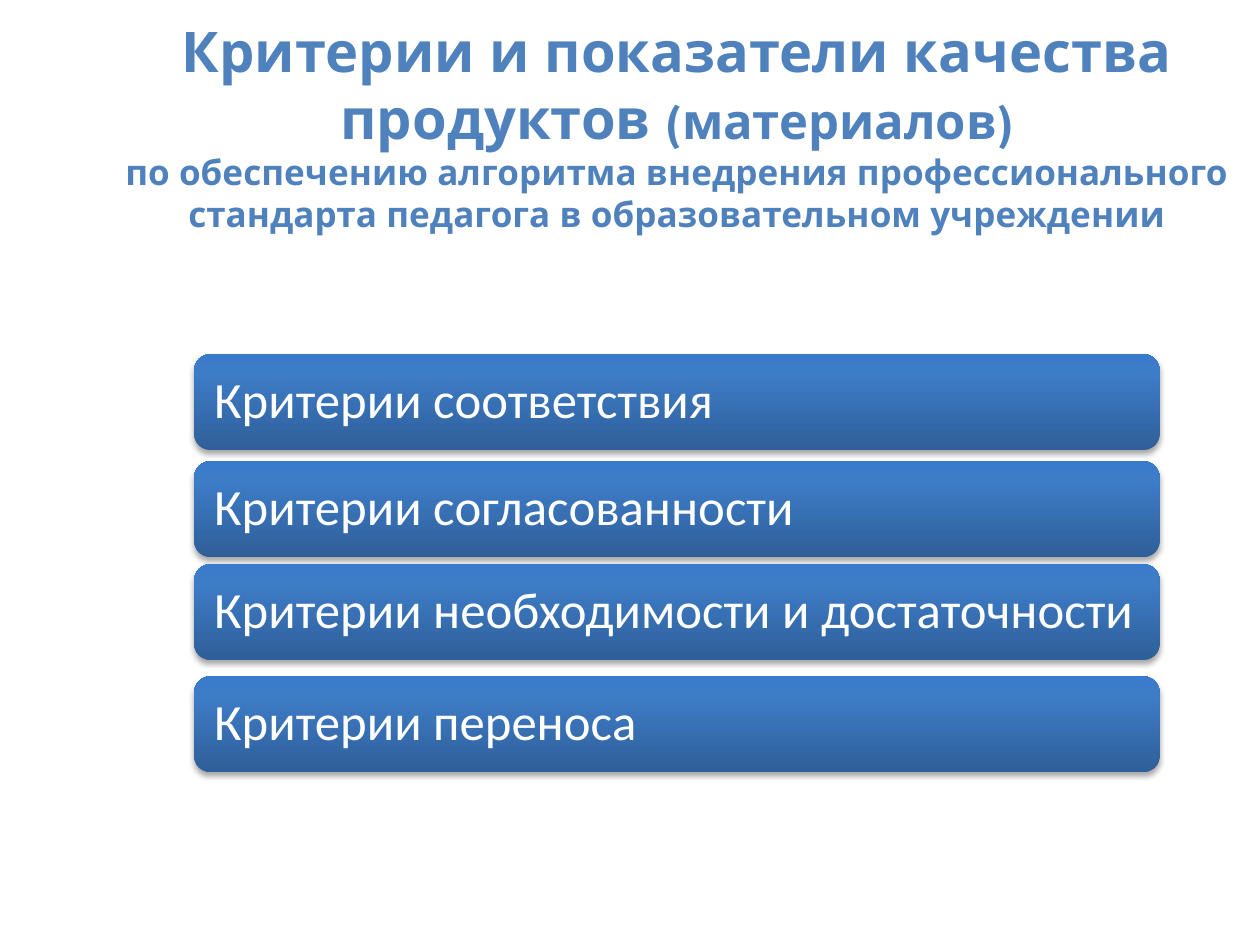
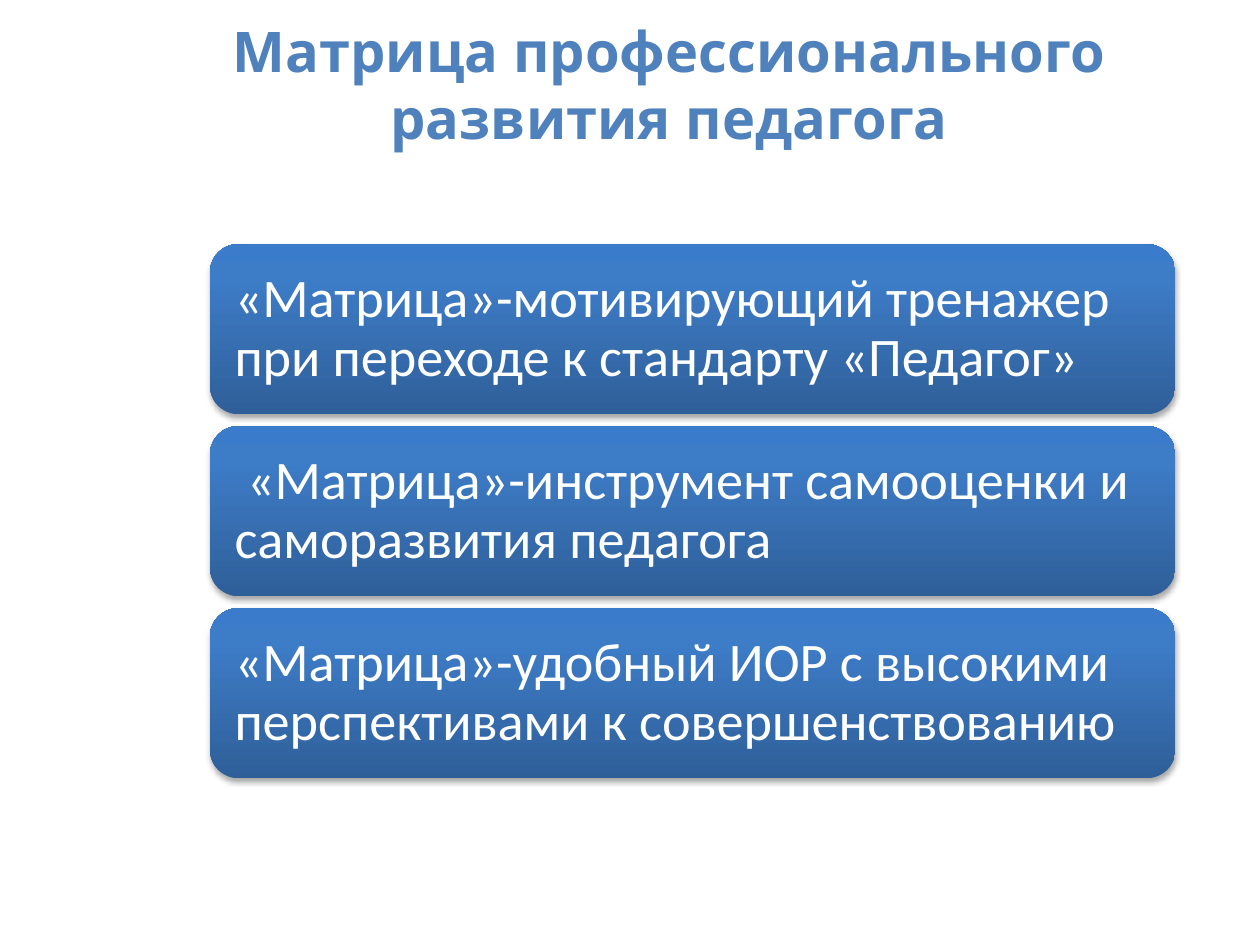
from dataclasses import dataclass

from lxml.etree import SubElement
from pptx import Presentation
from pptx.dml.color import RGBColor
from pptx.enum.shapes import MSO_SHAPE as Shape
from pptx.enum.text import MSO_ANCHOR as Anchor, PP_ALIGN as Align
from pptx.oxml.ns import qn
from pptx.util import Pt

SLIDES = [
    {
        "title": [
            [("Критерии и показатели качества продуктов ", "title"),
             ("(материалов)", "aside"),
             ("\n", "aside"),
             ("по обеспечению алгоритма внедрения профессионального "
              "стандарта педагога в образовательном учреждении", "subtitle")],
        ],
        "bars": [
            ("Критерии соответствия", 0),
            ("Критерии согласованности", 0),
            ("Критерии необходимости и достаточности", 0),
            ("Критерии переноса", 0),
        ],
        "left": 111,
        "tops": [202.4, 263.6, 322.4, 386.5],
        "height": 54.8,
        "size": 29,
    },
    {
        "title": [
            [("Матрица профессионального ", "title")],
            [("развития педагога ", "title")],
        ],
        "bars": [
            ("«Матрица»-мотивирующий тренажер при переходе к стандарту «Педагог»", 0),
            ("«Матрица»-инструмент самооценки и саморазвития педагога", 7),
            ("«Матрица»-удобный ИОР с высокими перспективами к совершенствованию", 0),
        ],
        "left": 120,
        "tops": [139.5 + 104 * row for row in range(3)],
        "height": 97.2,
        "size": 31,
    },
]


@dataclass(frozen=True)
class Theme:
    title_font: str = "League Spartan"
    bar_font: str = "Calibri"
    title_color: str = "4F81BD"
    bar_text: str = "FFFFFF"
    bar_gradient: tuple = ((0, "2F5F99"), (80, "3D7CC7"), (100, "3A7CCB"))
    shadow_color: str = "000000"
    title: int = 32
    aside: int = 28
    subtitle: int = 20


THEME = Theme()
TITLE_BOX = (62, 5.8, 649.4, 90)
BAR_WIDTH = 551.6
INSET_RATIO = 0.3


def style(font, name, size, color, bold=False):
    font.name = name
    font.size = Pt(size)
    font.bold = bold
    font.color.rgb = RGBColor.from_string(color)


def add_color(parent, color):
    return SubElement(parent, qn("a:srgbClr"), val=color)


def add_title(slide, paragraphs):
    box = slide.shapes.add_textbox(*(Pt(length) for length in TITLE_BOX))
    frame = box.text_frame
    frame.word_wrap = True
    for index, parts in enumerate(paragraphs):
        paragraph = frame.add_paragraph() if index else frame.paragraphs[0]
        paragraph.alignment = Align.CENTER
        for text, role in parts:
            if text == "\n":
                paragraph.add_line_break()
                continue
            run = paragraph.add_run()
            run.text = text
            style(run.font, THEME.title_font, getattr(THEME, role), THEME.title_color, True)


def paint_bar(shape):
    shape.line.fill.background()
    shape.fill.gradient()
    shape.fill.gradient_angle = 90
    properties = shape.element.spPr
    stops = properties.find(qn("a:gradFill")).find(qn("a:gsLst"))
    for stop in list(stops):
        stops.remove(stop)
    for position, color in THEME.bar_gradient:
        add_color(SubElement(stops, qn("a:gs"), pos=str(position * 1000)), color)

    shape.shadow.inherit = False
    effects = properties.find(qn("a:effectLst"))
    shadow = SubElement(effects, qn("a:outerShdw"), blurRad=str(Pt(3.1)),
                        dist=str(Pt(1.8)), dir="5400000", rotWithShape="0")
    SubElement(add_color(shadow, THEME.shadow_color), qn("a:alpha"), val="35000")


def add_bar(slide, text, indent, left, top, height, size):
    shape = slide.shapes.add_shape(
        Shape.ROUNDED_RECTANGLE, Pt(left), Pt(top), Pt(BAR_WIDTH), Pt(height))
    paint_bar(shape)
    frame = shape.text_frame
    frame.word_wrap = True
    frame.vertical_anchor = Anchor.MIDDLE
    inset = Pt(size * INSET_RATIO)
    frame.margin_left = frame.margin_right = inset
    frame.margin_top = frame.margin_bottom = inset
    frame.text = text
    paragraph = frame.paragraphs[0]
    paragraph.alignment = Align.LEFT
    paragraph.line_spacing = 0.9
    if indent:
        paragraph._p.get_or_add_pPr().set("indent", str(Pt(indent)))
    style(paragraph.runs[0].font, THEME.bar_font, size, THEME.bar_text)


def main():
    presentation = Presentation()
    presentation.slide_width = Pt(720)
    presentation.slide_height = Pt(540)
    for content in SLIDES:
        slide = presentation.slides.add_slide(presentation.slide_layouts[6])
        add_title(slide, content["title"])
        for (text, indent), top in zip(content["bars"], content["tops"]):
            add_bar(slide, text, indent, content["left"], top,
                    content["height"], content["size"])
    presentation.save("out.pptx")


if __name__ == "__main__":
    main()
